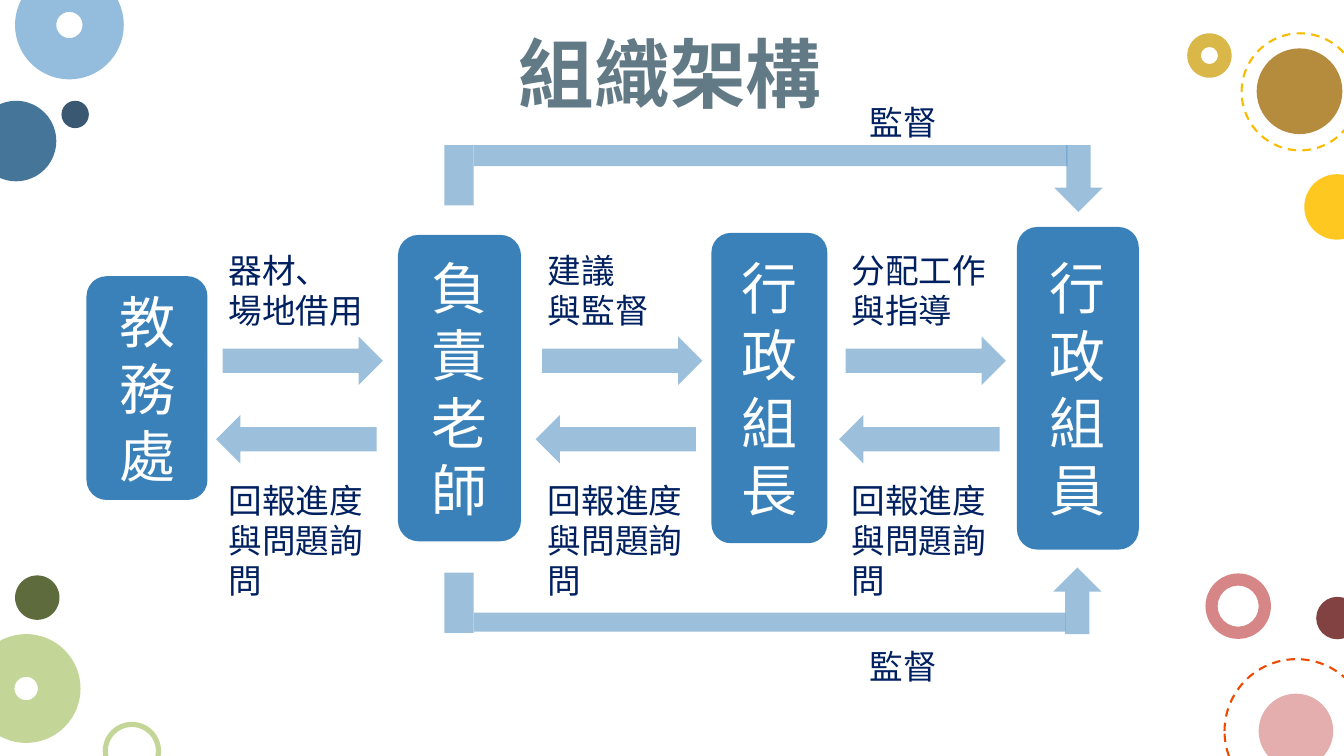
"""Build the organisation chart slide with its reporting and supervision flows."""
import pptx
import pptx.dml.color
import pptx.enum.dml
import pptx.enum.shapes
import pptx.enum.text
import pptx.oxml
import pptx.oxml.ns
import pptx.util
import lxml.etree

Cm = pptx.util.Cm
SHAPE = pptx.enum.shapes.MSO_SHAPE
ALIGN = pptx.enum.text.PP_ALIGN
ANCHOR = pptx.enum.text.MSO_ANCHOR
FIT = pptx.enum.text.MSO_AUTO_SIZE

THEME = {
    "font": "Noto Sans CJK SC",
    "title": {"size": 54, "color": "617A86", "bold": True},
    "role": {"size": 40, "color": "FFFFFF", "bold": False},
    "label": {"size": 24, "color": "002060", "bold": False},
    "blue": "3A81BA",
    "arrow_alpha": 50,
    "circle_alpha": 87,
    "dash_width": 1.5,
}

TITLE = ("組織架構", (12.83, 0.56, 8.2, 2.57))

DISCS = [
    (-0.61, 2.54, 2.03, "2B618B"),
    (1.55, 2.54, 0.69, "1D405D"),
    (33.17, 15.04, 1.07, "712627"),
    (31.72, 17.48, 1.88, "E0A3A3"),
    (31.67, 1.22, 2.16, "AB7A22"),
    (32.87, 4.39, 1.65, "FFC000"),
    (0.38, 14.5, 1.12, "465621"),
]
DONUTS = [
    (30.38, 14.45, 1.65, "D07576", 0.186),
    (0.38, -0.74, 2.74, "85B4D9", 0.379),
    (2.59, 18.19, 1.47, "BBD189", 0.088),
    (-0.71, 15.98, 2.74, "BBD189", 0.392),
    (29.92, 0.84, 1.12, "D5AD2F", 0.306),
]
DASHED_RINGS = [(30.86, 16.61, 3.63, "ED4A00"), (31.29, 0.84, 2.95, "F8BB00")]

ROLES = [
    ("教務處", (2.18, 6.96, 3.05, 5.64)),
    ("負責老師", (10.03, 5.92, 3.1, 7.72)),
    ("行政組長", (17.93, 5.87, 2.92, 7.82)),
    ("行政組員", (25.63, 5.72, 3.07, 8.13)),
]

REPORT = ["回報進度", "與問題詢問"]
FLOWS = [
    (5.51, ["器材、", "場地借用"]),
    (13.56, ["建議", "與監督"]),
    (21.21, ["分配工作", "與指導"]),
]

SUPERVISION = ["監督"]
SUPERVISION_PATHS = [
    {"post": 3.66, "bar": (3.66, 14.96, 0.53), "head": (26.57, 3.66),
     "arrow": SHAPE.DOWN_ARROW, "label": 2.44},
    {"post": 14.43, "bar": (15.44, 14.91, 0.48), "head": (26.54, 14.3),
     "arrow": SHAPE.UP_ARROW, "label": 16.15},
]
POST_LEFT, POST_WIDTH, POST_HEIGHT = 11.2, 0.74, 1.52
ARROW_LENGTH, ARROW_BREADTH, TURN_LENGTH = 4.04, 1.22, 1.68


def rgb(value):
    return pptx.dml.color.RGBColor.from_string(value)


def add_shape(shapes, kind, place, color=None, alpha=100):
    shape = shapes.add_shape(kind, *map(Cm, place))
    shape.shadow.inherit = False
    shape.line.fill.background()
    if color is None:
        shape.fill.background()
        return shape
    shape.fill.solid()
    shape.fill.fore_color.rgb = rgb(color)
    if alpha < 100:
        tone = shape.fill._xPr.find(".//" + pptx.oxml.ns.qn("a:srgbClr"))
        lxml.etree.SubElement(tone, pptx.oxml.ns.qn("a:alpha"), val=str(alpha * 1000))
    return shape


def write(frame, lines, style, align=ALIGN.LEFT):
    values = {"name": THEME["font"], "size": pptx.util.Pt(style["size"]), "bold": style["bold"]}
    for index, line in enumerate(lines):
        para = frame.paragraphs[0] if index == 0 else frame.add_paragraph()
        para.alignment = align
        span = para.add_run()
        span.text = line
        for name, value in values.items():
            setattr(span.font, name, value)
        span.font.color.rgb = rgb(style["color"])
        lxml.etree.SubElement(span._r.get_or_add_rPr(), pptx.oxml.ns.qn("a:ea"),
                              typeface=THEME["font"])


def add_text(page, place, lines, style, wrap=True):
    box = page.shapes.add_textbox(*map(Cm, place))
    for name, value in {"word_wrap": wrap, "auto_size": FIT.SHAPE_TO_FIT_TEXT}.items():
        setattr(box.text_frame, name, value)
    write(box.text_frame, lines, style)


def add_circles(page):
    alpha = THEME["circle_alpha"]
    for left, top, size, color in DISCS:
        add_shape(page.shapes, SHAPE.OVAL, (left, top, size, size), color, alpha)
    for left, top, size, color, thickness in DONUTS:
        donut = add_shape(page.shapes, SHAPE.DONUT, (left, top, size, size), color, alpha)
        donut.adjustments[0] = thickness
    for left, top, size, color in DASHED_RINGS:
        ring = add_shape(page.shapes, SHAPE.OVAL, (left, top, size, size))
        ring.line.color.rgb = rgb(color)
        ring.line.width = pptx.util.Pt(THEME["dash_width"])
        ring.line.dash_style = pptx.enum.dml.MSO_LINE.DASH


def add_roles(page):
    for role, place in ROLES:
        box = add_shape(page.shapes, SHAPE.ROUNDED_RECTANGLE, place, THEME["blue"])
        for name, value in {"word_wrap": True, "vertical_anchor": ANCHOR.MIDDLE}.items():
            setattr(box.text_frame, name, value)
        write(box.text_frame, role, THEME["role"], ALIGN.CENTER)


def add_flows(page):
    for left, request in FLOWS:
        for kind, shift, top in ((SHAPE.LEFT_ARROW, -0.06, 10.46), (SHAPE.RIGHT_ARROW, 0.1, 8.48)):
            add_shape(page.shapes, kind, (left + shift, top, ARROW_LENGTH, ARROW_BREADTH),
                      THEME["blue"], THEME["arrow_alpha"])
        add_text(page, (left, 11.96, 3.96, 3.33), REPORT, THEME["label"])
        add_text(page, (left, 6.17, 3.96, 2.31), request, THEME["label"])


def add_supervision(page):
    for route in SUPERVISION_PATHS:
        group = page.shapes.add_group_shape()
        bar_top, bar_width, bar_height = route["bar"]
        parts = [
            (route["arrow"], (*route["head"], ARROW_BREADTH, TURN_LENGTH)),
            (SHAPE.RECTANGLE, (POST_LEFT, route["post"], POST_WIDTH, POST_HEIGHT)),
            (SHAPE.RECTANGLE, (POST_LEFT + POST_WIDTH, bar_top, bar_width, bar_height)),
        ]
        for kind, place in parts:
            add_shape(group.shapes, kind, place, THEME["blue"], THEME["arrow_alpha"])
        add_text(page, (21.67, route["label"], 2.39, 1.27), SUPERVISION, THEME["label"])


def main():
    deck = pptx.Presentation()
    deck.slide_width, deck.slide_height = Cm(33.87), Cm(19.05)
    page = deck.slides.add_slide(deck.slide_layouts[6])
    add_circles(page)
    title, place = TITLE
    add_text(page, place, [title], THEME["title"], wrap=False)
    add_roles(page)
    add_flows(page)
    add_supervision(page)
    deck.save("out.pptx")


if __name__ == "__main__":
    main()
